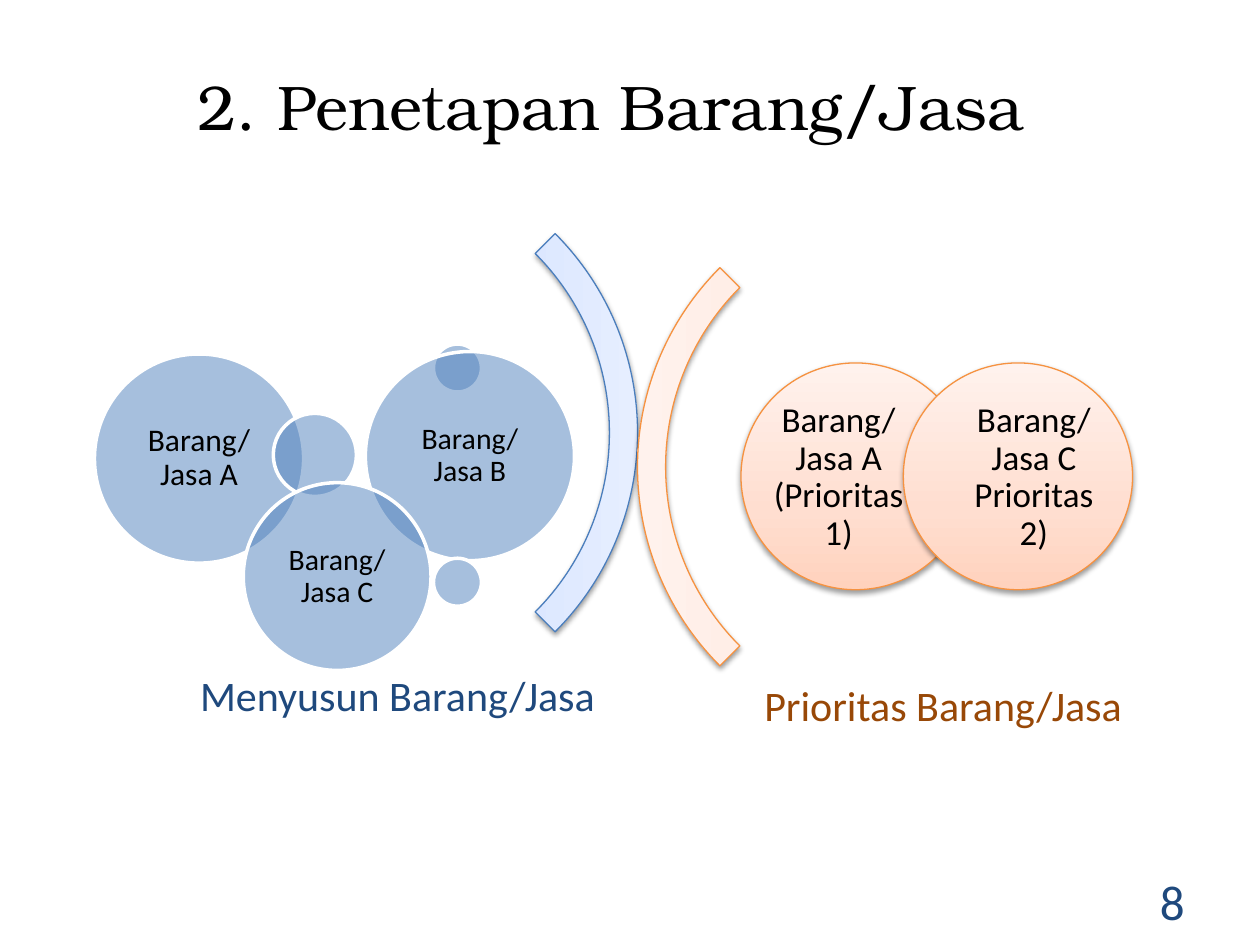
"""Build the slide on determining goods and services with python-pptx."""
from copy import deepcopy
from dataclasses import dataclass
from math import sqrt

from lxml.etree import SubElement
from pptx import Presentation
from pptx.dml.color import RGBColor
from pptx.enum.shapes import MSO_SHAPE
from pptx.enum.text import MSO_ANCHOR, PP_ALIGN
from pptx.oxml.ns import qn
from pptx.util import Pt

BLACK = RGBColor(0x00, 0x00, 0x00)
WHITE = RGBColor(0xFF, 0xFF, 0xFF)
BLUE = RGBColor(0x4F, 0x81, 0xBD)
BLUE_LINE = RGBColor(0x4B, 0x7E, 0xBC)
NAVY = RGBColor(0x1F, 0x49, 0x7D)
ORANGE_LINE = RGBColor(0xF6, 0x92, 0x40)
BROWN = RGBColor(0x98, 0x48, 0x07)
BLUE_STOPS = (RGBColor(0xA4, 0xC4, 0xFF), RGBColor(0xBF, 0xD4, 0xFF), RGBColor(0xE6, 0xEE, 0xFF))
ORANGE_STOPS = (RGBColor(0xFF, 0xD2, 0xBD), RGBColor(0xFF, 0xDE, 0xD0), RGBColor(0xFF, 0xF2, 0xED))
STOP_POSITIONS = (0, 35000, 100000)
ARC_SIZE = 321.8
INSCRIBED_INSET = (1 - sqrt(0.5)) / 2


@dataclass(frozen=True)
class Box:
    left: float
    top: float
    width: float
    height: float

    def lengths(self) -> tuple:
        return Pt(self.left), Pt(self.top), Pt(self.width), Pt(self.height)


@dataclass(frozen=True)
class Bubble:
    left: float
    top: float
    diameter: float
    label: str = ""
    size: float = 17


@dataclass(frozen=True)
class Priority:
    left: float
    label_left: float
    label: str


BUBBLES = (
    Bubble(54, 202.3, 119.5, "Barang/\vJasa A", 18),
    Bubble(156.2, 236.2, 47.5),
    Bubble(247.7, 196.6, 27.4),
    Bubble(208.8, 200.9, 119.5, "Barang/\vJasa B"),
    Bubble(247.7, 319, 27.4),
    Bubble(139, 275.8, 107.3, "Barang/\vJasa C"),
)
PRIORITIES = (
    Priority(423.4, 441.4, "Barang/\vJasa A (Prioritas 1)"),
    Priority(516.2, 553, "Barang/\vJasa C Prioritas 2)"),
)


def add_text(slide, box: Box, text: str, size: float, color: RGBColor, inset: float,
             alignment=PP_ALIGN.CENTER, line_spacing: float = 0.9) -> None:
    frame = slide.shapes.add_textbox(*box.lengths()).text_frame
    frame.word_wrap = True
    frame.vertical_anchor = MSO_ANCHOR.MIDDLE
    frame.margin_left = frame.margin_right = Pt(inset)
    frame.margin_top = frame.margin_bottom = Pt(inset)
    frame.text = text
    paragraph = frame.paragraphs[0]
    paragraph.alignment = alignment
    paragraph.line_spacing = line_spacing
    paragraph.font.name = "Calibri"
    paragraph.font.size = Pt(size)
    paragraph.font.color.rgb = color


def add_outlined(slide, kind, box: Box, line_color: RGBColor, line_width: float):
    shape = slide.shapes.add_shape(kind, *box.lengths())
    shape.line.color.rgb = line_color
    shape.line.width = Pt(line_width)
    shape.shadow.inherit = False
    return shape


def add_glossy(slide, kind, box: Box, stops: tuple, line_color: RGBColor):
    shape = add_outlined(slide, kind, box, line_color, 0.75)
    shape.fill.gradient()
    shape.fill.gradient_angle = 90
    properties = shape._element.spPr
    stop_list = properties.find(qn("a:gradFill")).find(qn("a:gsLst"))
    for old_stop in list(stop_list):
        stop_list.remove(old_stop)
    for position, color in zip(STOP_POSITIONS, stops):
        stop = SubElement(stop_list, qn("a:gs"), pos=str(position))
        SubElement(stop, qn("a:srgbClr"), val=str(color))
    shadow = SubElement(properties.find(qn("a:effectLst")), qn("a:outerShdw"),
                        blurRad=str(Pt(3.1)), dist=str(Pt(1.6)), dir="5400000", rotWithShape="0")
    shadow_color = SubElement(shadow, qn("a:srgbClr"), val=str(BLACK))
    SubElement(shadow_color, qn("a:alpha"), val="38000")
    return shape


def add_arc(slide, left: float, top: float, rotation: float, stops: tuple, line_color: RGBColor) -> None:
    arc = add_glossy(slide, MSO_SHAPE.BLOCK_ARC, Box(left, top, ARC_SIZE, ARC_SIZE), stops, line_color)
    arc.rotation = rotation
    for index, value in enumerate((135, 189, 0.05)):
        arc.adjustments[index] = value


def add_priority(slide, priority: Priority) -> None:
    add_glossy(slide, MSO_SHAPE.OVAL, Box(priority.left, 207.4, 131, 129.6), ORANGE_STOPS, ORANGE_LINE)
    add_text(slide, Box(priority.label_left, 223.2, 75.6, 99.4), priority.label, 20, BLACK, 0)


def add_bubble(slide, bubble: Bubble) -> None:
    diameter = bubble.diameter
    circle = add_outlined(slide, MSO_SHAPE.OVAL, Box(bubble.left, bubble.top, diameter, diameter), WHITE, 2)
    circle.fill.solid()
    circle.fill.fore_color.rgb = BLUE
    fill_color = circle._element.spPr.find(qn("a:solidFill"))[0]
    SubElement(fill_color, qn("a:alpha"), val="50000")
    if bubble.label:
        offset = diameter * INSCRIBED_INSET
        side = diameter - 2 * offset
        add_text(slide, Box(bubble.left + offset, bubble.top + offset, side, side),
                 bubble.label, bubble.size, BLACK, 5)


def add_title(slide, text: str) -> None:
    title = slide.shapes.title
    title.left, title.top, title.width, title.height = Box(25.2, 15.1, 648, 90).lengths()
    title.text_frame.text = text
    title.text_frame.vertical_anchor = MSO_ANCHOR.MIDDLE
    paragraph = title.text_frame.paragraphs[0]
    paragraph.alignment = PP_ALIGN.CENTER
    paragraph.font.name = "TeX Gyre Bonum"
    paragraph.font.size = Pt(36)
    paragraph.font.color.rgb = BLACK


def main() -> None:
    presentation = Presentation()
    presentation.slide_width, presentation.slide_height = Pt(720), Pt(540)
    slide = presentation.slides.add_slide(presentation.slide_layouts[5])
    add_title(slide, "2. Penetapan Barang/Jasa")
    add_arc(slide, 42.5, 86.4, 90, BLUE_STOPS, BLUE_LINE)
    add_arc(slide, 42.5 + ARC_SIZE, 105.8, 270, ORANGE_STOPS, ORANGE_LINE)
    add_text(slide, Box(416.9, 372.2, 244.1, 64.1), "Prioritas Barang/Jasa", 24, BROWN, 7.2)
    for priority in PRIORITIES:
        add_priority(slide, priority)
    for bubble in BUBBLES:
        add_bubble(slide, bubble)
    add_text(slide, Box(105.1, 366.5, 244.1, 64.1), "Menyusun Barang/Jasa", 24, NAVY, 7.2)
    add_text(slide, Box(516.2, 500.4, 167.8, 28.8), "8", 28, NAVY, 7.2, PP_ALIGN.RIGHT, 1)
    presentation.save("out.pptx")


if __name__ == "__main__":
    main()
